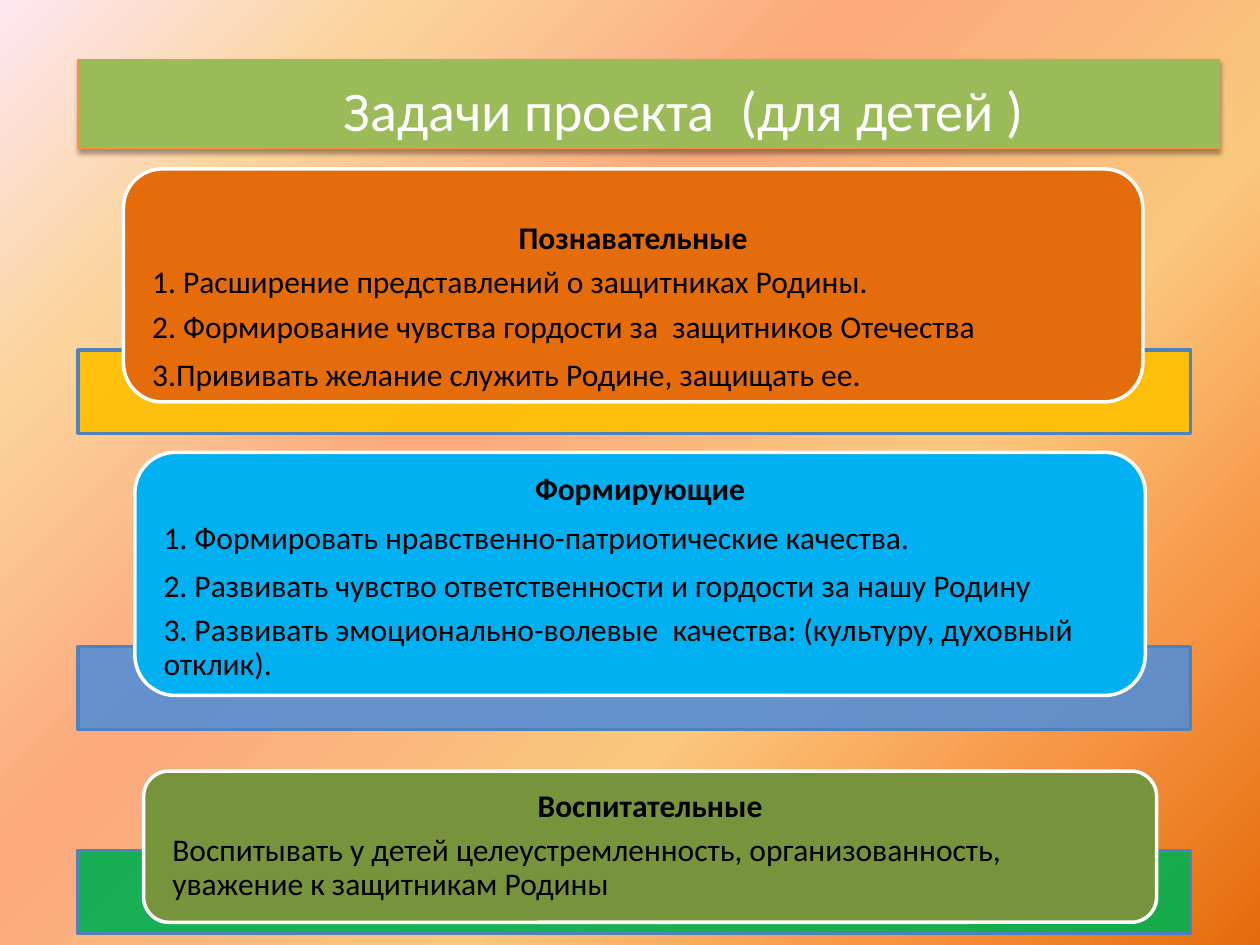
"""Build the slide of project goals for children."""
from dataclasses import dataclass
from typing import NamedTuple

from lxml.etree import SubElement
from pptx import Presentation
from pptx.dml.color import RGBColor as Rgb
from pptx.enum.shapes import MSO_SHAPE as Kind
from pptx.enum.text import MSO_ANCHOR as Anchor, MSO_AUTO_SIZE as Fit, PP_ALIGN as Align
from pptx.oxml import parse_xml
from pptx.oxml.ns import nsdecls, qn
from pptx.util import Inches, Pt


@dataclass(frozen=True)
class Theme:
    """Colours and type sizes."""
    font: str = "Calibri"
    head: int = 32
    text: int = 18
    gap: int = 6
    ink: str = "000000"
    white: str = "FFFFFF"
    green: str = "9BBB59"
    edge: str = "F69240"
    rim: str = "4F81BD"
    stops: tuple = ((0, "E46C0A"), (18, "F79646"), (36, "FAC77D"),
                    (61, "FBA97D"), (82, "FBD49C"), (100, "FEE7F2"))


class Box(NamedTuple):
    """Place and size in inches."""
    left: float
    top: float
    width: float
    height: float


class Line(NamedTuple):
    """One paragraph and its line spacing."""
    text: str
    pitch: float = 0.9


@dataclass(frozen=True)
class Goal:
    """A card of goals with the bar behind it."""
    bar: float
    tint: str
    box: Box
    fill: str
    lead: float
    lines: tuple


THEME = Theme()
GOALS = (
    Goal(2.78, "FFC000", Box(0.98, 1.34, 8.09, 1.85), "E46C0A", 0.33, (
        Line("Познавательные"),
        Line("1. Расширение представлений о защитниках Родины."),
        Line("2. Формирование чувства гордости за  защитников Отечества"),
        Line("3.Прививать желание служить Родине, защищать ее.", 1.0))),
    Goal(5.13, "558ED5", Box(1.07, 3.59, 8.02, 1.93), "00B0F0", 0.04, (
        Line("Формирующие", 1.0),
        Line("1. Формировать нравственно-патриотические качества.", 1.0),
        Line("2. Развивать чувство ответственности и гордости за нашу Родину", 1.0),
        Line("3. Развивать эмоционально-волевые  качества: (культуру, духовный  отклик)."))),
    Goal(6.75, "00B050", Box(1.14, 6.12, 8.04, 1.2), "77933C", 0.09, (
        Line("Воспитательные"),
        Line("Воспитывать у детей целеустремленность, организованность, "
             "уважение к защитникам Родины"))),
)


def paint(shape, fill: str, rim: str, width: float) -> None:
    """Set the fill and outline."""
    shape.fill.solid()
    shape.fill.fore_color.rgb = Rgb.from_string(fill)
    shape.line.color.rgb = Rgb.from_string(rim)
    shape.line.width = Pt(width)


def style(part, size: int, tint: str, bold: bool = False) -> None:
    """Format the runs of a paragraph."""
    for run in part.runs:
        run.font.name = THEME.font
        run.font.size = Pt(size)
        run.font.bold = bold
        run.font.color.rgb = Rgb.from_string(tint)


def draw(slide, kind: Kind, box: Box, fill: str, rim: str):
    """Add a flat preset shape."""
    shape = slide.shapes.add_shape(kind, *map(Inches, box))
    shape.shadow.inherit = False
    paint(shape, fill, rim, 2)
    return shape


def add_back(slide) -> None:
    """Fill the background with a gradient from the lower right corner."""
    stops = "".join(f'<a:gs pos="{pos * 1000}"><a:srgbClr val="{tint}"/></a:gs>'
                    for pos, tint in THEME.stops)
    back = parse_xml(
        f'<p:bg {nsdecls("p", "a")}><p:bgPr><a:gradFill rotWithShape="1">'
        f'<a:gsLst>{stops}</a:gsLst><a:path path="circle">'
        '<a:fillToRect l="100000" t="100000"/></a:path></a:gradFill>'
        '<a:effectLst/></p:bgPr></p:bg>')
    slide.element.cSld.insert(0, back)


def add_title(slide) -> None:
    """Place and format the title."""
    title = slide.shapes.title
    title.left, title.top, title.width, title.height = map(Inches, Box(0.62, 0.47, 9.06, 0.71))
    paint(title, THEME.green, THEME.edge, 0.75)
    title.element.spPr.append(parse_xml(
        f'<a:effectLst {nsdecls("a")}><a:outerShdw blurRad="{Pt(3.1)}" dist="{Pt(1.8)}" '
        'dir="5400000" rotWithShape="0"><a:srgbClr val="000000"><a:alpha val="35000"/>'
        '</a:srgbClr></a:outerShdw></a:effectLst>'))
    frame = title.text_frame
    frame.text = "Задачи проекта  (для детей )"
    frame.auto_size = Fit.NONE
    frame.vertical_anchor = Anchor.BOTTOM
    frame.margin_left = Inches(0.66)
    part = frame.paragraphs[0]
    part.alignment = Align.CENTER
    style(part, THEME.head, THEME.white)


def add_goal(slide, goal: Goal) -> None:
    """Draw a bar and the card in front of it."""
    bar = draw(slide, Kind.RECTANGLE, Box(0.62, goal.bar, 8.83, 0.66), goal.tint, THEME.rim)
    tint = bar.element.spPr.find(qn("a:solidFill")).find(qn("a:srgbClr"))
    SubElement(tint, qn("a:alpha"), val="90000")
    card = draw(slide, Kind.ROUNDED_RECTANGLE, goal.box, goal.fill, THEME.white)
    frame = card.text_frame
    frame.word_wrap = True
    frame.vertical_anchor = Anchor.TOP
    frame.margin_left = frame.margin_right = Inches(0.23 - goal.box.height * 0.05)
    frame.margin_top, frame.margin_bottom = Inches(goal.lead), 0
    frame.text = "\n".join(line.text for line in goal.lines)
    for rank, (part, line) in enumerate(zip(frame.paragraphs, goal.lines)):
        part.alignment = Align.LEFT if rank else Align.CENTER
        part.line_spacing = line.pitch
        part.space_after = Pt(THEME.gap)
        style(part, THEME.text, THEME.ink, rank == 0)


def main() -> None:
    """Build and save the deck."""
    deck = Presentation()
    deck.slide_width, deck.slide_height = Inches(10), Inches(7.5)
    slide = deck.slides.add_slide(deck.slide_layouts[5])
    add_back(slide)
    add_title(slide)
    for goal in GOALS:
        add_goal(slide, goal)
    deck.save("out.pptx")


if __name__ == "__main__":
    main()
